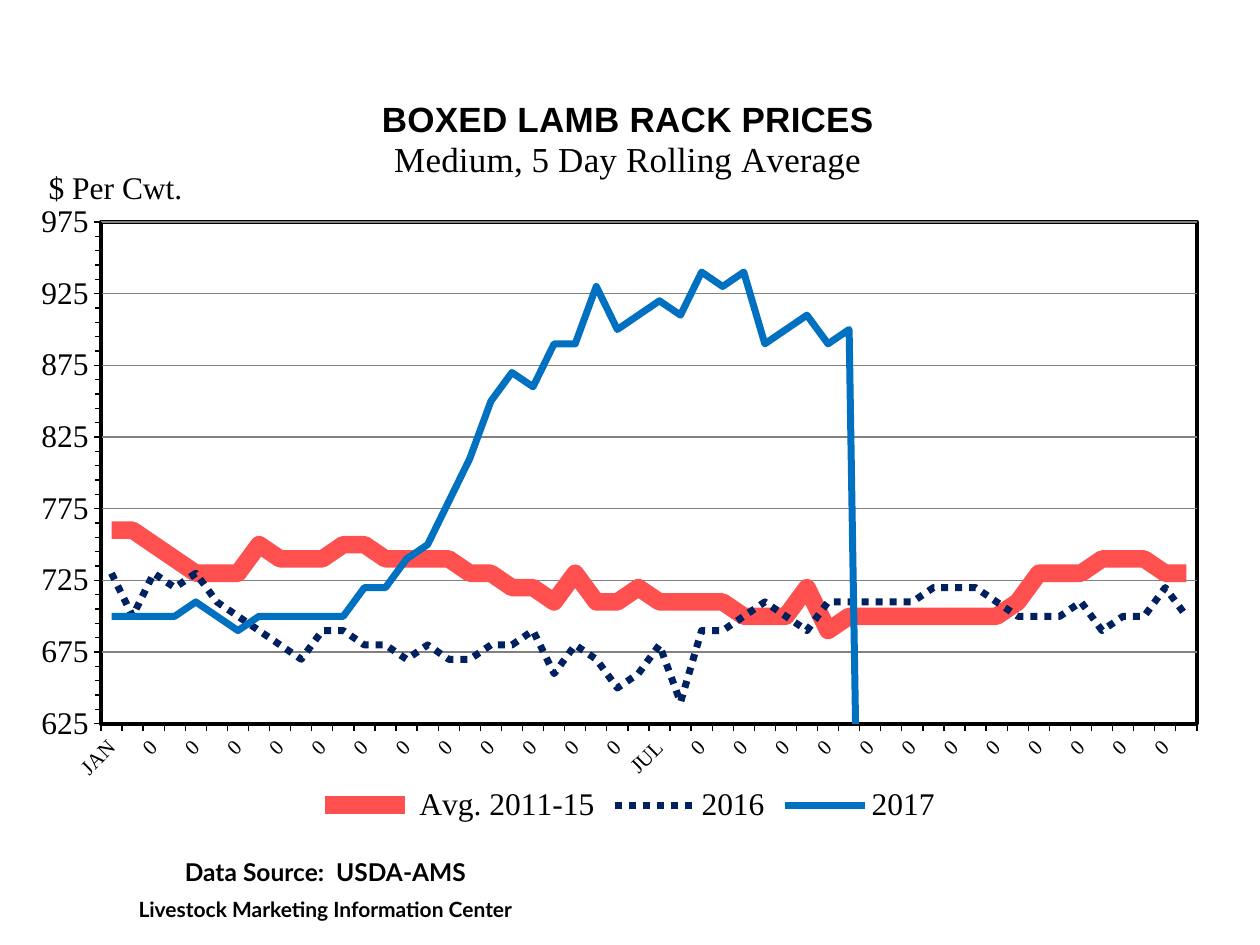
import pptx
import pptx.util
import pptx.chart.data
import pptx.dml.color
import pptx.enum.chart
import pptx.enum.dml
import pptx.enum.text
import pptx.oxml

SCALE = 914400 / 126
WIDE, HIGH = 1218, 746  # chart size in px
Pt = pptx.util.Pt
SERIF = "Times New Roman"
NS = 'xmlns:c="http://schemas.openxmlformats.org/drawingml/2006/chart" ' \
     'xmlns:a="http://schemas.openxmlformats.org/drawingml/2006/main"'

AVG = [760, 760, 750, 740, 730, 730, 730, 750, 740, 740, 740, 750, 750,
       740, 740, 740, 740, 730, 730, 720, 720, 710, 730, 710, 710, 720,
       710, 710, 710, 710, 700, 700, 700, 720, 690, 700, 700, 700, 700,
       700, 700, 700, 700, 710, 730, 730, 730, 740, 740, 740, 730, 730]
LAST = [730, 700, 730, 720, 730, 710, 700, 690, 680, 670, 690, 690, 680,
        680, 670, 680, 670, 670, 680, 680, 690, 660, 680, 670, 650, 660,
        680, 640, 690, 690, 700, 710, 700, 690, 710, 710, 710, 710, 710,
        720, 720, 720, 710, 700, 700, 700, 710, 690, 700, 700, 720, 700]
THIS = [700, 700, 700, 700, 710, 700, 690, 700, 700, 700, 700, 700, 720,
        720, 740, 750, 780, 810, 850, 870, 860, 890, 890, 930, 900, 910,
        920, 910, 940, 930, 940, 890, 900, 910, 890, 900] + [None] * 16

DOT = pptx.enum.dml.MSO_LINE.ROUND_DOT
# name, values, colour, line width, dash
SERIES = [(" Avg. 2011-15", AVG, "FF5050", 10, None),
          ("2016", LAST, "002060", 4, DOT),
          ("2017", THIS, "0070C0", 4, None)]


def px(n):
    return round(n * SCALE)


def color(code):
    return pptx.dml.color.RGBColor.from_string(code)


def style(font, size, name, bold=False):
    font.size, font.name, font.bold = Pt(size), name, bold
    font.color.rgb = color("000000")


def stroke(line, code, width):
    line.color.rgb = color(code)
    line.width = Pt(width)


def add_run(para, text, size, name, bold=False):
    run = para.add_run()
    run.text = text
    style(run.font, size, name, bold)


def place(part, after, x, y, w=None, h=None):
    """Lay out a chart part, in px within the chart, after the named child."""
    for old in part.findall(pptx.oxml.ns.qn("c:layout")):
        part.remove(old)
    inner = '<c:layoutTarget val="inner"/>' if w else ""
    size = f'<c:w val="{w / WIDE}"/><c:h val="{h / HIGH}"/>' if w else ""
    node = pptx.oxml.parse_xml(
        f'<c:layout {NS}><c:manualLayout>{inner}<c:xMode val="edge"/>'
        f'<c:yMode val="edge"/><c:x val="{x / WIDE}"/>'
        f'<c:y val="{y / HIGH}"/>{size}</c:manualLayout></c:layout>')
    if after:
        part.find(pptx.oxml.ns.qn(after)).addnext(node)
    else:
        part.insert(0, node)


def set_axes(chart):
    enum = pptx.enum.chart
    cat, val = chart.category_axis, chart.value_axis
    for axis in (cat, val):
        axis.major_tick_mark = enum.XL_TICK_MARK.OUTSIDE
        stroke(axis.format.line, "000000", 0.75)
    # Week axis: slanted labels, every second one shown
    style(cat.tick_labels.font, 12, SERIF)
    cat._element.txPr.find(pptx.oxml.ns.qn("a:bodyPr")).set("rot", "-2700000")
    cat.tick_label_position = enum.XL_TICK_LABEL_POSITION.LOW
    tail = cat._element.find(pptx.oxml.ns.qn("c:noMultiLvlLbl"))
    for tag, step in (("tickLblSkip", 2), ("tickMarkSkip", 1)):
        tail.addprevious(pptx.oxml.parse_xml(f'<c:{tag} {NS} val="{step}"/>'))
    # Price axis
    val.minimum_scale, val.maximum_scale = 625, 975
    val.major_unit, val.minor_unit = 50, 10
    val.minor_tick_mark = enum.XL_TICK_MARK.OUTSIDE
    val.has_major_gridlines = True
    stroke(val.major_gridlines.format.line, "808080", 0.75)
    style(val.tick_labels.font, 18, SERIF)
    frame = val.axis_title.text_frame
    add_run(frame.paragraphs[0], "$ Per Cwt.", 18, SERIF)
    frame._txBody.bodyPr.set("rot", "0")
    place(val.axis_title._element, "c:tx", 22, 78)


def add_prices(slide):
    data = pptx.chart.data.CategoryChartData()
    months = {0: "JAN", 13: "APR", 26: "JUL", 39: "OCT"}
    data.categories = [months.get(week, "0") for week in range(52)]
    for name, vals, *_ in SERIES:
        data.add_series(name, vals)
    chart = slide.shapes.add_chart(
        pptx.enum.chart.XL_CHART_TYPE.LINE,
        px(21), px(84), px(WIDE), px(HIGH), data).chart
    style(chart.font, 18, SERIF)
    chart.plots[0].vary_by_categories = False
    for item, (_, _, code, width, dash) in zip(chart.plots[0].series, SERIES):
        item.smooth = False
        item.marker.style = pptx.enum.chart.XL_MARKER_STYLE.NONE
        stroke(item.format.line, code, width)
        if dash:
            item.format.line.dash_style = dash
    set_axes(chart)

    # Title
    frame = chart.chart_title.text_frame
    add_run(frame.paragraphs[0], "BOXED LAMB RACK PRICES", 20, "Arial", True)
    add_run(frame.add_paragraph(), "Medium, 5 Day Rolling Average", 20, SERIF)
    place(chart.chart_title._element, "c:tx", 357, 11)

    # Legend
    chart.has_legend = True
    chart.legend.position = pptx.enum.chart.XL_LEGEND_POSITION.BOTTOM
    chart.legend.include_in_layout = False
    style(chart.legend.font, 18, SERIF)
    place(chart.legend._element, "c:legendPos", 294, 702)

    # Plot frame; weeks without a price fall to zero
    root = chart._chartSpace
    area = root.find(".//" + pptx.oxml.ns.qn("c:plotArea"))
    place(area, None, 80, 138, 1096, 502)
    area.append(pptx.oxml.parse_xml(
        f'<c:spPr {NS}><a:solidFill><a:srgbClr val="FFFFFF"/></a:solidFill>'
        f'<a:ln w="{Pt(2.25)}"><a:solidFill><a:srgbClr val="000000"/>'
        '</a:solidFill></a:ln></c:spPr>'))
    root.find(".//" + pptx.oxml.ns.qn("c:dispBlanksAs")).set("val", "zero")


def add_source(slide):
    box = slide.shapes.add_textbox(px(42), px(851), px(567), px(81))
    frame = box.text_frame
    frame.word_wrap = True
    first, second = frame.paragraphs[0], frame.add_paragraph()
    add_run(first, "Data Source:  USDA-AMS", 14, "Lato", True)
    add_run(second, "Livestock Marketing Information Center", 12, "Lato", True)
    second.space_before = Pt(5.5)
    for para in (first, second):
        para.alignment = pptx.enum.text.PP_ALIGN.CENTER


def main():
    deck = pptx.Presentation()
    deck.slide_width, deck.slide_height = px(1260), px(945)
    slide = deck.slides.add_slide(deck.slide_layouts[6])
    add_prices(slide)
    add_source(slide)
    deck.save("out.pptx")


if __name__ == "__main__":
    main()
